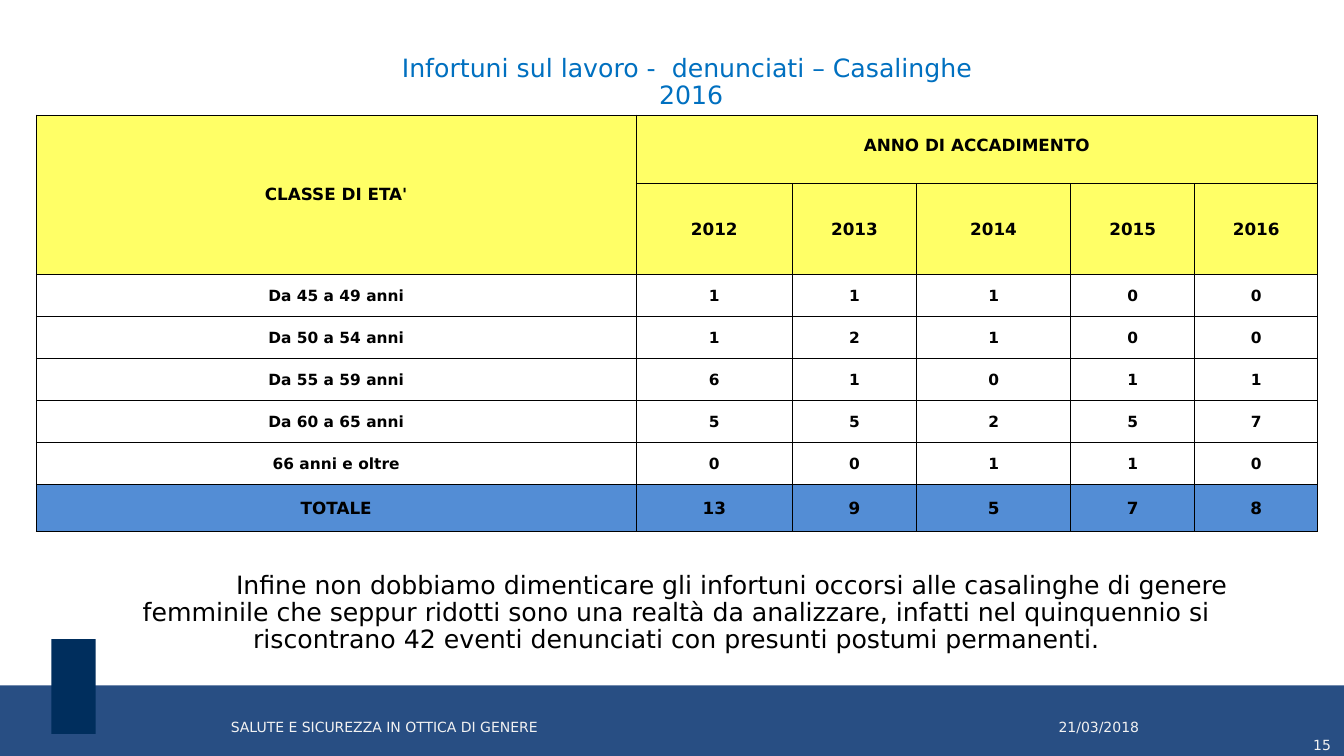
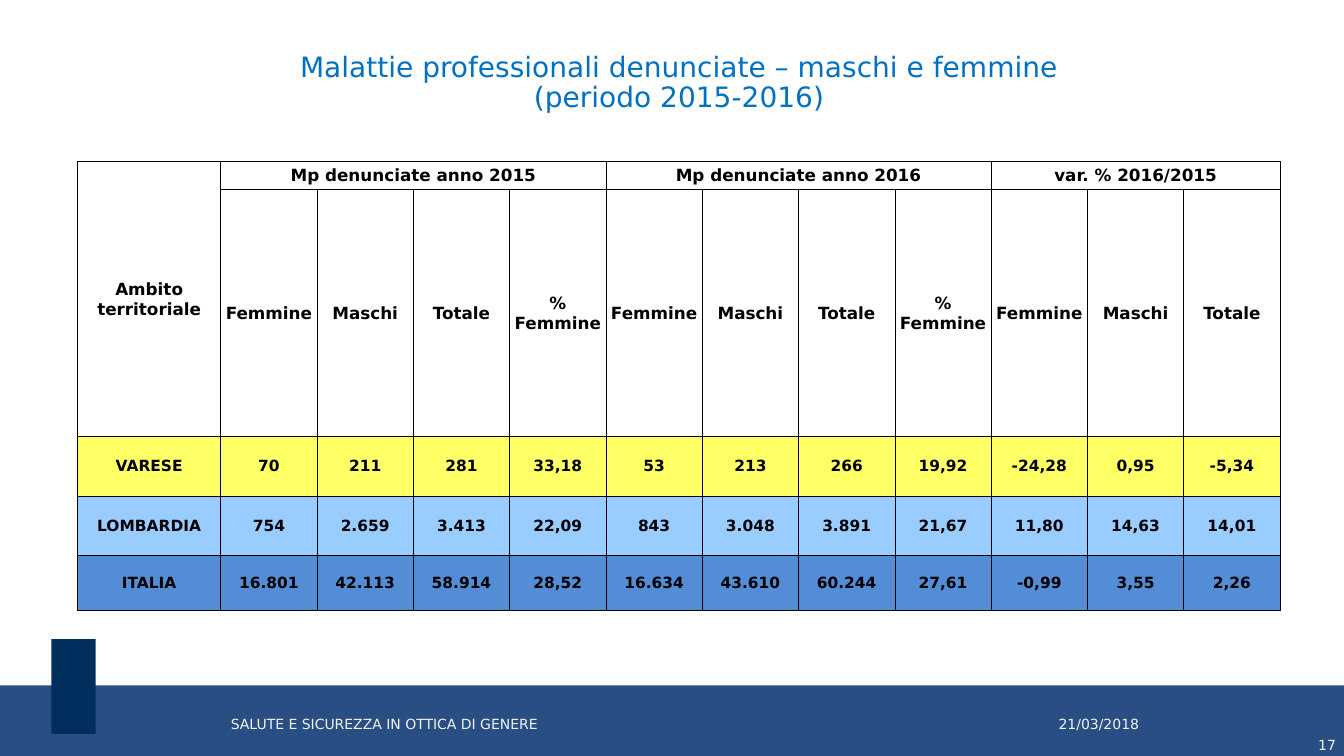
from pptx import Presentation
from pptx.dml.color import RGBColor
from pptx.enum.shapes import MSO_SHAPE as Shape
from pptx.enum.text import MSO_ANCHOR as Anchor, PP_ALIGN as Align
from pptx.oxml.ns import qn
from pptx.util import Emu, Inches, Pt
from lxml.etree import SubElement

ROWS = 75
SLIDE_W, SLIDE_H = Inches(13.33), Inches(7.5)
UNIT = SLIDE_H / ROWS
COLS = SLIDE_W / UNIT

FONT = "DejaVu Sans"
TITLE, INK, PALE, WHITE = "0070C0", "000000", "F2F2F2", "FFFFFF"
BAND, TAB = "284E83", "002E5D"
YELLOW, SKY, BLUE = "FFFF66", "99CCFF", "538DD5"


def grid(*units):
    return [Emu(round(u * UNIT)) for u in units]


def rgb(value):
    return RGBColor.from_string(value)


def add_run(p, text, size, color, bold=False):
    r = p.add_run()
    r.text = text
    r.font.name, r.font.size, r.font.bold = FONT, Pt(size), bold
    r.font.color.rgb = rgb(color)


def fill_text(sp, box, lines, size, color, align, wrap=True):
    sp.left, sp.top, sp.width, sp.height = grid(*box)
    tf = sp.text_frame
    tf.word_wrap = wrap
    tf.vertical_anchor = Anchor.TOP
    tf.margin_left = tf.margin_top = tf.margin_right = tf.margin_bottom = 0
    p = tf.paragraphs[0]
    p.alignment, p.line_spacing = align, 0.9
    for i, line in enumerate(lines):
        if i:
            p.add_line_break()
        add_run(p, line, size, color)
    return p


def add_text(s, box, text, size, color, align=Align.LEFT, wrap=True):
    sp = s.shapes.add_textbox(*grid(*box))
    return fill_text(sp, box, [text], size, color, align, wrap)


def add_rect(s, box, color):
    sp = s.shapes.add_shape(Shape.RECTANGLE, *grid(*box))
    sp.shadow.inherit = False
    sp.fill.solid()
    sp.fill.fore_color.rgb = rgb(color)
    sp.line.fill.background()


def add_footer(s, box, text_top, number, number_right):
    x, y, w, h = box
    add_rect(s, box, BAND)
    add_rect(s, (x + 5.1, y - 4.6, 4.4, 9.4), TAB)
    add_text(s, (x + 22.9, text_top, 69.6, 2.1),
             "SALUTE E SICUREZZA IN OTTICA DI GENERE", 10, PALE, wrap=False)
    add_text(s, (x + 105, text_top, 15, 2.1), "21/03/2018", 10, PALE)
    add_text(s, (x + number_right - 10, y + h - 1.7, 10, 1.7),
             number, 10, PALE, Align.RIGHT)


def new_slide(prs, title_box, title, size, text_top, number, number_right):
    s = prs.slides.add_slide(prs.slide_layouts[5])
    fill_text(s.shapes.title, title_box, title, size, TITLE, Align.CENTER)
    add_footer(s, (0, 68, COLS, 7), text_top, number, number_right)
    return s


def add_borders(cell):
    tcPr = cell._tc.get_or_add_tcPr()
    for side in ("a:lnL", "a:lnR", "a:lnT", "a:lnB"):
        ln = SubElement(tcPr, qn(side), w=str(Pt(0.5)))
        SubElement(SubElement(ln, qn("a:solidFill")), qn("a:srgbClr"), val=INK)


def add_grid_table(s, box, widths, heights, rows, fills, sizes, merges):
    table = s.shapes.add_table(len(rows), len(widths), *grid(*box)).table
    table.first_row = table.horz_banding = False
    for column, width in zip(table.columns, grid(*widths)):
        column.width = width
    for row, height in zip(table.rows, grid(*heights)):
        row.height = height
    for i, (texts, fill, size) in enumerate(zip(rows, fills, sizes)):
        for j, text in enumerate(texts):
            cell = table.cell(i, j)
            add_borders(cell)
            cell.fill.solid()
            cell.fill.fore_color.rgb = rgb(fill)
            cell.vertical_anchor = Anchor.MIDDLE
            cell.margin_left = cell.margin_top = cell.margin_right = Inches(0.01)
            cell.margin_bottom = 0
            p = cell.text_frame.paragraphs[0]
            p.alignment = Align.CENTER
            if text:
                add_run(p, text, size, INK, True)
    for first, last in merges:
        table.cell(*first).merge(table.cell(*last))
    return table


def injuries_slide(prs):
    s = new_slide(prs, (8.7, 5.5, 119.7, 5.5),
                  ["Infortuni sul lavoro -  denunciati – Casalinghe ", "2016"],
                  18, 71.5, "15", 132)
    rows = [
        ["CLASSE DI ETA'", "ANNO DI ACCADIMENTO", "", "", "", ""],
        ["", "2012", "2013", "2014", "2015", "2016"],
        ["Da 45 a 49 anni", "1", "1", "1", "0", "0"],
        ["Da 50 a 54 anni", "1", "2", "1", "0", "0"],
        ["Da 55 a 59 anni", "6", "1", "0", "1", "1"],
        ["Da 60 a 65 anni", "5", "5", "2", "5", "7"],
        ["66 anni e oltre", "0", "0", "1", "1", "0"],
        ["TOTALE", "13", "9", "5", "7", "8"],
    ]
    table = add_grid_table(
        s, (3.6, 11.4, 127.1, 41.3),
        [59.5, 15.5, 12.3, 15.3, 12.3, 12.2],
        [6.8, 9] + [4.18] * 5 + [4.6], rows,
        [YELLOW] * 2 + [WHITE] * 5 + [BLUE],
        [12] * 2 + [11] * 5 + [12],
        [((0, 0), (1, 0)), ((0, 1), (0, 5))])
    table.cell(0, 1).margin_bottom = Inches(0.07)
    p = add_text(
        s, (9.6, 56.8, 115, 8.2),
        "Infine non dobbiamo dimenticare gli infortuni occorsi alle casalinghe "
        "di genere femminile che seppur ridotti sono una realtà da analizzare, "
        "infatti nel quinquennio si riscontrano 42 eventi denunciati con "
        "presunti postumi permanenti.", 18, INK, Align.CENTER)
    p._p.get_or_add_pPr().set("indent", str(Inches(1.1)))


def diseases_slide(prs):
    s = new_slide(prs, (7.7, 5.3, 119.3, 6),
                  ["Malattie professionali denunciate – maschi e femmine",
                   "(periodo 2015-2016)"], 20, 71.2, "17", 132.5)
    counts = ["Femmine", "Maschi", "Totale"]
    year = counts + ["% Femmine"]
    rows = [
        ["Ambito territoriale", "Mp denunciate anno 2015", "", "", "",
         "Mp denunciate anno 2016", "", "", "", "var. % 2016/2015", "", ""],
        [""] + year * 2 + counts,
        ["VARESE", "70", "211", "281", "33,18", "53", "213", "266", "19,92",
         "-24,28", "0,95", "-5,34"],
        ["LOMBARDIA", "754", "2.659", "3.413", "22,09", "843", "3.048",
         "3.891", "21,67", "11,80", "14,63", "14,01"],
        ["ITALIA", "16.801", "42.113", "58.914", "28,52", "16.634", "43.610",
         "60.244", "27,61", "-0,99", "3,55", "2,26"],
    ]
    width, label = 119.3, 14.2
    add_grid_table(
        s, (7.7, 16, width, 44.6),
        [label] + [(width - label) / 11] * 11,
        [2.8, 24.5, 5.9, 5.9, 5.5], rows,
        [WHITE, WHITE, YELLOW, SKY, BLUE], [12, 12, 11, 11, 11],
        [((0, 0), (1, 0)), ((0, 1), (0, 4)), ((0, 5), (0, 8)), ((0, 9), (0, 11))])


def main():
    prs = Presentation()
    prs.slide_width, prs.slide_height = SLIDE_W, SLIDE_H
    injuries_slide(prs)
    diseases_slide(prs)
    prs.save("out.pptx")


if __name__ == "__main__":
    main()
